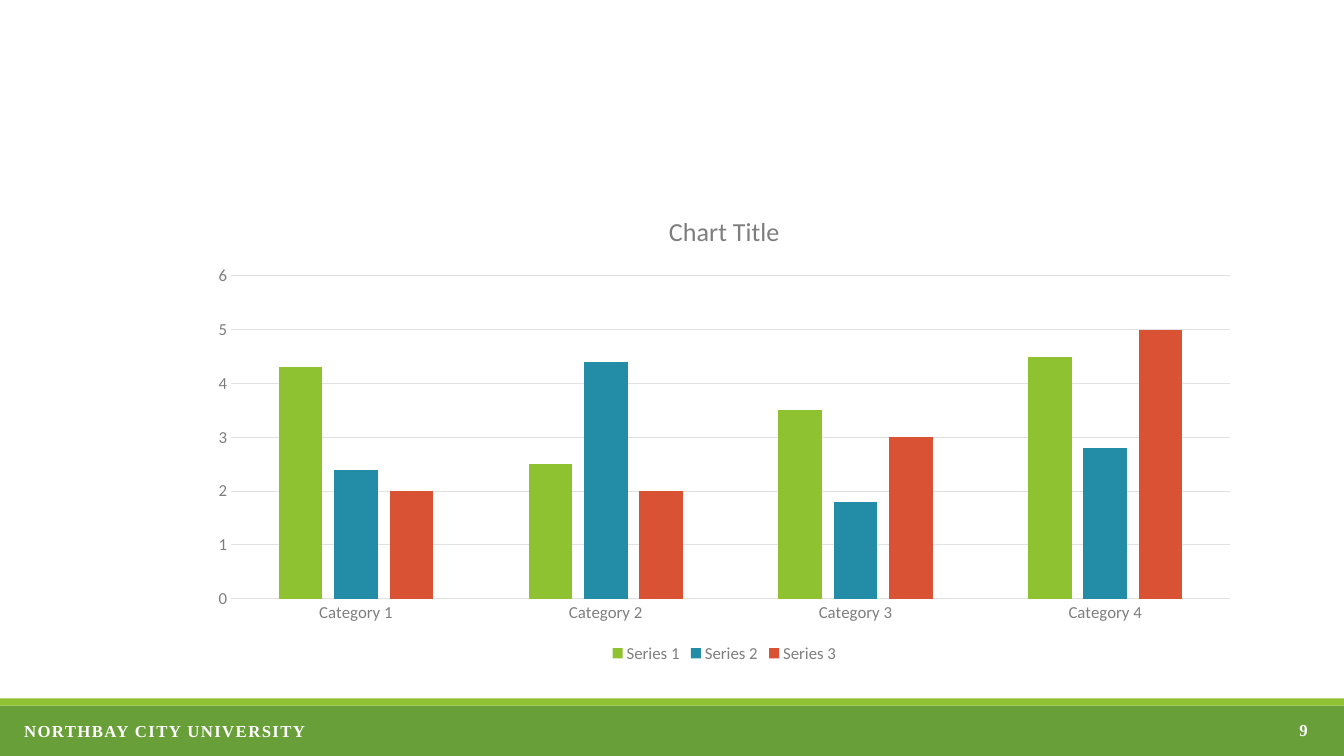
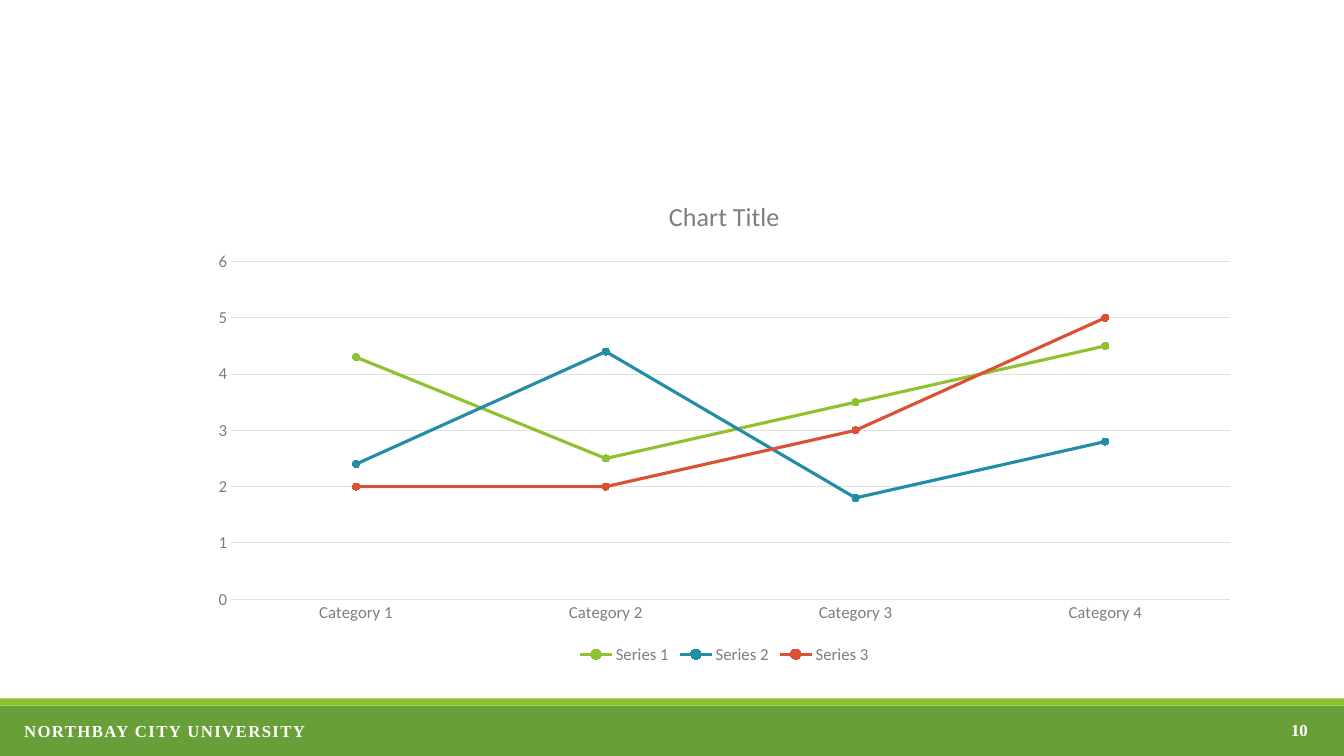
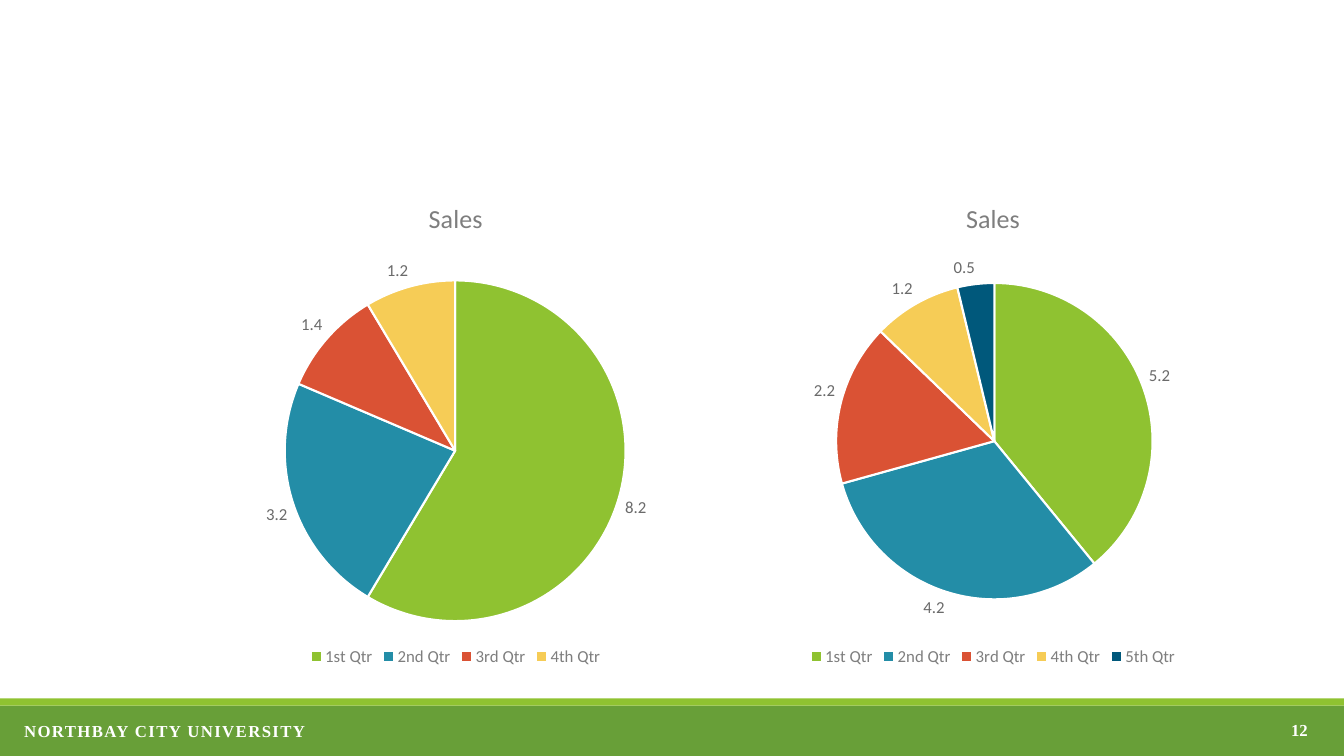
"""Build three chart slides that share a green footer band."""
from pptx import Presentation
from pptx.chart.data import CategoryChartData
from pptx.dml.color import RGBColor
from pptx.enum.chart import (XL_CHART_TYPE, XL_LABEL_POSITION, XL_LEGEND_POSITION,
                             XL_MARKER_STYLE, XL_TICK_MARK)
from pptx.enum.shapes import MSO_SHAPE
from pptx.enum.text import MSO_ANCHOR, PP_ALIGN
from pptx.util import Inches, Pt

COLORS = {"band": "689F38", "stripe": "8FC231", "white": "FFFFFF", "chart": "383838",
          "muted": "7E7E7E", "label": "6A6A6A", "grid": "E1E1E1"}
PALETTE = ["8FC231", "238DA7", "DA5234", "F6CC56", "00587B"]
CHART_FONT, FOOTER_FONT = "Calibri", "Times New Roman"
FOOTER = "NORTHBAY CITY UNIVERSITY"
W, H = 13.33, 7.5
BAND_H, STRIPE_H = 0.5, 0.07
LEFT, CONTENT_W, PIE_W = 1.96, 10.45, 5.12

CATEGORIES = [f"Category {n}" for n in range(1, 5)]
SERIES = [("Series 1", [4.3, 2.5, 3.5, 4.5]),
          ("Series 2", [2.4, 4.4, 1.8, 2.8]),
          ("Series 3", [2, 2, 3, 5])]
QUARTERS = ["1st Qtr", "2nd Qtr", "3rd Qtr", "4th Qtr", "5th Qtr"]
SALES = [[8.2, 3.2, 1.4, 1.2], [5.2, 4.2, 2.2, 1.2, 0.5]]


def rgb(value):
    """Turn a hex string into a colour."""
    return RGBColor.from_string(value)


def style_font(font, size, color, name=CHART_FONT, bold=False):
    """Set the face, size, weight and colour of a font."""
    font.name, font.size, font.bold = name, Pt(size), bold
    font.color.rgb = rgb(color)


def paint(fill, color):
    """Fill with one solid colour."""
    fill.solid()
    fill.fore_color.rgb = rgb(color)


def add_band(s, top, height, color):
    """Draw a full-width band."""
    sp = s.shapes.add_shape(MSO_SHAPE.RECTANGLE, 0, Inches(top), Inches(W), Inches(height))
    sp.shadow.inherit = False
    paint(sp.fill, color)
    sp.line.fill.background()


def add_footer_text(s, text, box, align, spacing=0):
    """Write one line of footer text."""
    tf = s.shapes.add_textbox(*map(Inches, box)).text_frame
    tf.word_wrap = True
    tf.vertical_anchor = MSO_ANCHOR.MIDDLE
    p = tf.paragraphs[0]
    p.alignment = align
    r = p.add_run()
    r.text = text
    style_font(r.font, 12, COLORS["white"], FOOTER_FONT, True)
    if spacing:
        r.font._element.set("spc", str(spacing * 100))


def add_page(prs, number):
    """Add a slide with its footer."""
    s = prs.slides.add_slide(prs.slide_layouts[6])
    add_band(s, H - BAND_H, BAND_H, COLORS["band"])
    add_band(s, H - BAND_H - STRIPE_H, STRIPE_H, COLORS["stripe"])
    add_footer_text(s, FOOTER, (0.14, 7.1, 12.48, 0.3), PP_ALIGN.LEFT, 1)
    add_footer_text(s, str(number), (10.07, 7.04, 3, 0.4), PP_ALIGN.RIGHT)
    return s


def add_chart(s, kind, box, title, cats, series):
    """Add a chart with the shared title and legend style."""
    data = CategoryChartData()
    data.categories = cats
    for name, values in series:
        data.add_series(name, values)
    chart = s.shapes.add_chart(kind, *map(Inches, box), data).chart
    style_font(chart.font, 10, COLORS["chart"])
    chart.has_title = True
    chart.chart_title.include_in_layout = False
    r = chart.chart_title.text_frame.paragraphs[0].add_run()
    r.text = title
    style_font(r.font, 18.6, COLORS["muted"])
    chart.has_legend = True
    chart.legend.position = XL_LEGEND_POSITION.BOTTOM
    chart.legend.include_in_layout = False
    style_font(chart.legend.font, 12, COLORS["muted"])
    return chart


def style_axes(chart):
    """Give both axes grey labels, no ticks and thin lines."""
    cat, val = chart.category_axis, chart.value_axis
    for axis in (cat, val):
        axis.major_tick_mark = axis.minor_tick_mark = XL_TICK_MARK.NONE
        style_font(axis.tick_labels.font, 12, COLORS["muted"])
    val.minimum_scale, val.maximum_scale, val.major_unit = 0, 6, 1
    val.has_major_gridlines = True
    val.format.line.fill.background()
    for line in (cat.format.line, val.major_gridlines.format.line):
        line.color.rgb = rgb(COLORS["grid"])
        line.width = Pt(0.75)


def add_columns(s):
    """Add the clustered column chart."""
    chart = add_chart(s, XL_CHART_TYPE.COLUMN_CLUSTERED, (LEFT, 1.92, CONTENT_W, 4.7),
                      "Chart Title", CATEGORIES, SERIES)
    style_axes(chart)
    plot = chart.plots[0]
    plot.vary_by_categories = False
    plot.gap_width, plot.overlap = 219, -27
    for ser, color in zip(plot.series, PALETTE):
        paint(ser.format.fill, color)


def add_lines(s):
    """Add the line chart with round markers."""
    chart = add_chart(s, XL_CHART_TYPE.LINE_MARKERS, (LEFT, 1.77, CONTENT_W, 4.86),
                      "Chart Title", CATEGORIES, SERIES)
    style_axes(chart)
    plot = chart.plots[0]
    plot.vary_by_categories = False
    for ser, color in zip(plot.series, PALETTE):
        ser.smooth = False
        ser.format.line.color.rgb = rgb(color)
        ser.format.line.width = Pt(2.25)
        ser.marker.style, ser.marker.size = XL_MARKER_STYLE.CIRCLE, 5
        paint(ser.marker.format.fill, color)
        ser.marker.format.line.color.rgb = rgb(color)


def add_pies(s):
    """Add the sales pies side by side."""
    step = CONTENT_W - PIE_W
    for i, values in enumerate(SALES):
        chart = add_chart(s, XL_CHART_TYPE.PIE, (LEFT + i * step, 1.79, PIE_W, 4.86),
                          "Sales", QUARTERS[:len(values)], [("Sales", values)])
        plot = chart.plots[0]
        plot.vary_by_categories = True
        ser = plot.series[0]
        for n, color in enumerate(PALETTE[:len(values)]):
            fmt = ser.points[n].format
            paint(fmt.fill, color)
            fmt.line.color.rgb = rgb(COLORS["white"])
            fmt.line.width = Pt(1.5)
        labels = ser.data_labels
        labels.show_value = True
        labels.position = XL_LABEL_POSITION.OUTSIDE_END
        style_font(labels.font, 12, COLORS["label"])


def main():
    """Build and save the deck."""
    prs = Presentation()
    prs.slide_width, prs.slide_height = Inches(W), Inches(H)
    for number, draw in ((9, add_columns), (10, add_lines), (12, add_pies)):
        draw(add_page(prs, number))
    prs.save("out.pptx")


if __name__ == "__main__":
    main()
